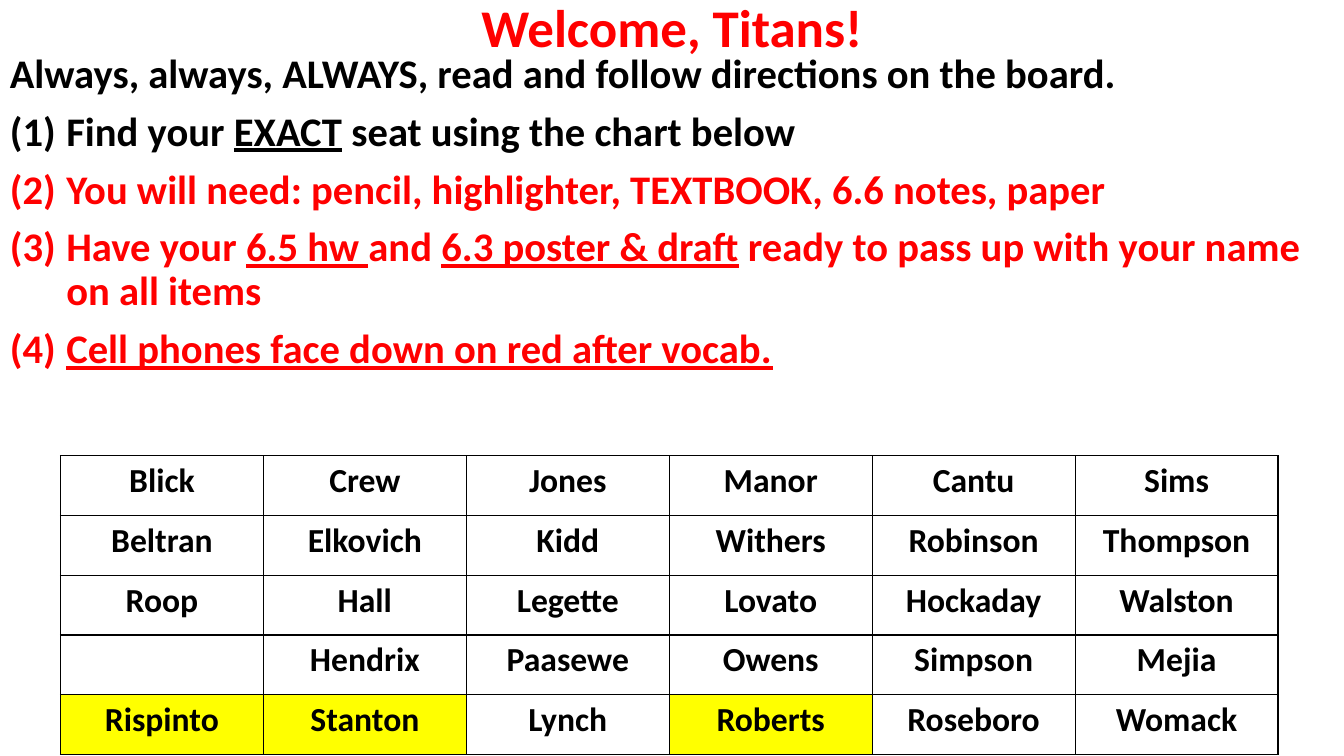
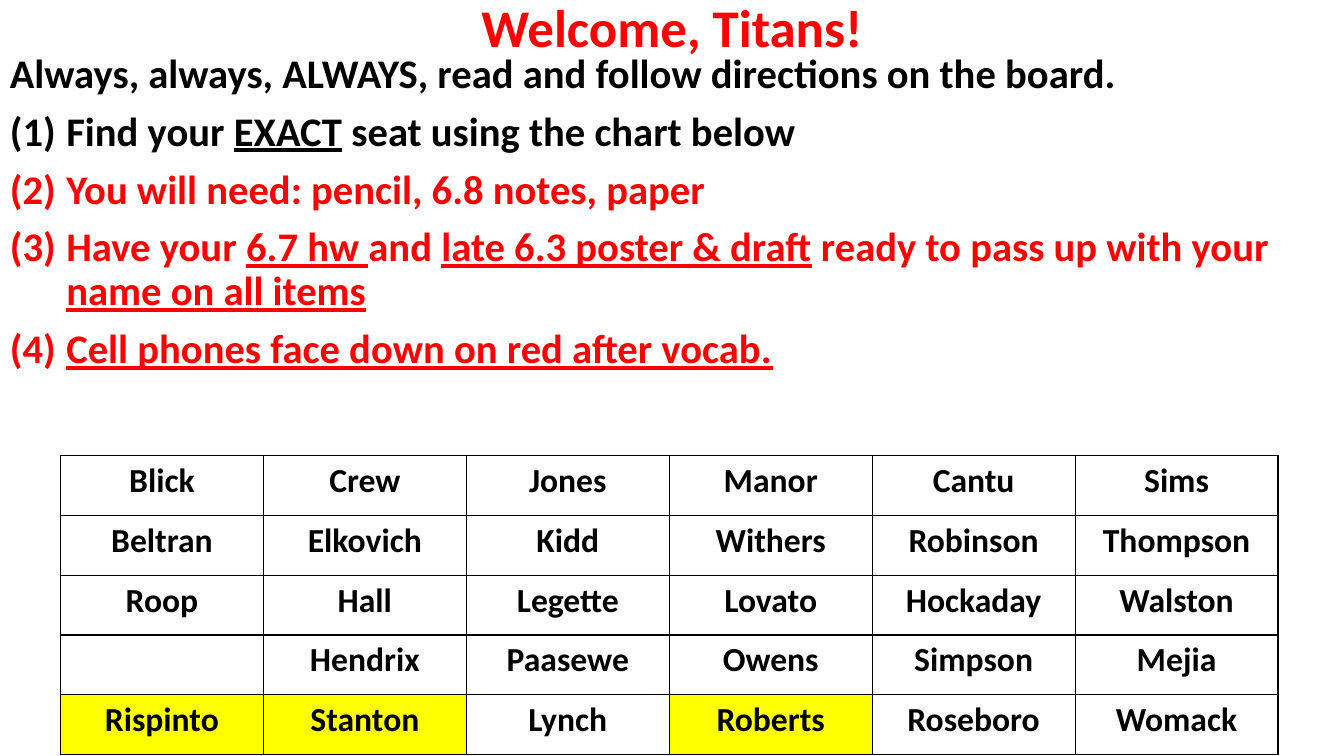
from lxml import etree
from pptx import Presentation
from pptx import util as u
from pptx.dml.color import RGBColor
from pptx.enum import text
from pptx.oxml.ns import qn

BLACK, RED, YELLOW = "000000", "FF0000", "FFFF00"

SEATS = [
    ["Blick", "Crew", "Jones", "Manor", "Cantu", "Sims"],
    ["Beltran", "Elkovich", "Kidd", "Withers", "Robinson", "Thompson"],
    ["Roop", "Hall", "Legette", "Lovato", "Hockaday", "Walston"],
    ["", "Hendrix", "Paasewe", "Owens", "Simpson", "Mejia"],
    ["Rispinto", "Stanton", "Lynch", "Roberts", "Roseboro", "Womack"],
]
HIGHLIGHTED = {"Rispinto", "Stanton", "Roberts"}

LESSONS = [
    (
        "You will need: pencil, highlighter, TEXTBOOK, 6.6 notes, paper",
        "Have your _6.5 hw _and _6.3 poster & draft_ ready to pass up with your name on all items",
    ),
    (
        "You will need: pencil, 6.8 notes, paper",
        "Have your _6.7 hw _and _late 6.3 poster & draft_ ready to pass up with your _name on all items_",
    ),
]


def rgb(value):
    return RGBColor.from_string(value)


class Deck:
    """Holds the style and current slide; places are in hundredths of the slide."""

    font = "Calibri"
    title_size, body_size, seat_size = 37.8, 29, 24
    indent = u.Inches(0.56)

    def __init__(self):
        self.prs = Presentation()
        self.prs.slide_width = u.Inches(13.33)
        self.prs.slide_height = u.Inches(7.5)
        self.s = None

    def new_slide(self):
        self.s = self.prs.slides.add_slide(self.prs.slide_layouts[6])

    def place(self, left, top, width, height):
        w, h = self.prs.slide_width, self.prs.slide_height
        return [int(share * side / 100) for share, side in zip((left, top, width, height), (w, h, w, h))]

    def runs(self, p, marked, size, color):
        for i, part in enumerate(marked.split("_")):
            if part:
                r = p.add_run()
                r.text = part
                r.font.name, r.font.size, r.font.bold = self.font, u.Pt(size), True
                r.font.underline = i % 2 == 1
                r.font.color.rgb = rgb(color)

    def text_frame(self, *at):
        tf = self.s.shapes.add_textbox(*self.place(*at)).text_frame
        tf.word_wrap = True
        return tf

    def title(self, words):
        tf = self.text_frame(0, 0, 100, 8.5)
        tf.vertical_anchor = text.MSO_ANCHOR.BOTTOM
        p = tf.paragraphs[0]
        p.alignment, p.line_spacing = text.PP_ALIGN.CENTER, 0.9
        self.runs(p, words, self.title_size, RED)

    def directions(self, lead, steps):
        tf = self.text_frame(0, 6.4, 100, 53.9)
        for i, (words, color) in enumerate([(lead, BLACK)] + steps):
            p = tf.add_paragraph() if i else tf.paragraphs[0]
            p.line_spacing, p.space_before = 0.9, u.Pt(10)
            if i:
                self.number(p)
            self.runs(p, words, self.body_size, color)

    def number(self, p):
        pPr = p._p.get_or_add_pPr()
        pPr.set("marL", str(self.indent))
        pPr.set("indent", str(-self.indent))
        etree.SubElement(pPr, qn("a:buFont"), typeface=self.font)
        etree.SubElement(pPr, qn("a:buAutoNum"), type="arabicParenBoth")

    def seating(self, rows, highlighted):
        at = self.place(4.5, 60.3, 90.6, 39.5)
        table = self.s.shapes.add_table(len(rows), len(rows[0]), *at).table
        table.first_row = table.horz_banding = False
        for i, row in enumerate(rows):
            for j, name in enumerate(row):
                cell = table.cell(i, j)
                if name in highlighted:
                    cell.fill.solid()
                    cell.fill.fore_color.rgb = rgb(YELLOW)
                else:
                    cell.fill.background()
                self.borders(cell)
                p = cell.text_frame.paragraphs[0]
                p.alignment = text.PP_ALIGN.CENTER
                self.runs(p, name, self.seat_size, BLACK)

    def borders(self, cell):
        tcPr = cell._tc.get_or_add_tcPr()
        for i, side in enumerate(("lnL", "lnR", "lnT", "lnB")):
            ln = etree.Element(qn("a:" + side), w=str(u.Pt(1)))
            fill = etree.SubElement(ln, qn("a:solidFill"))
            etree.SubElement(fill, qn("a:srgbClr"), val=BLACK)
            tcPr.insert(i, ln)


def main():
    deck = Deck()
    for supplies, hand_in in LESSONS:
        deck.new_slide()
        deck.title("Welcome, Titans!")
        deck.directions(
            "Always, always, ALWAYS, read and follow directions on the board.",
            [
                ("Find your _EXACT_ seat using the chart below", BLACK),
                (supplies, RED),
                (hand_in, RED),
                ("_Cell phones face down on red after vocab._", RED),
            ],
        )
        deck.seating(SEATS, HIGHLIGHTED)
    deck.prs.save("out.pptx")


if __name__ == "__main__":
    main()
